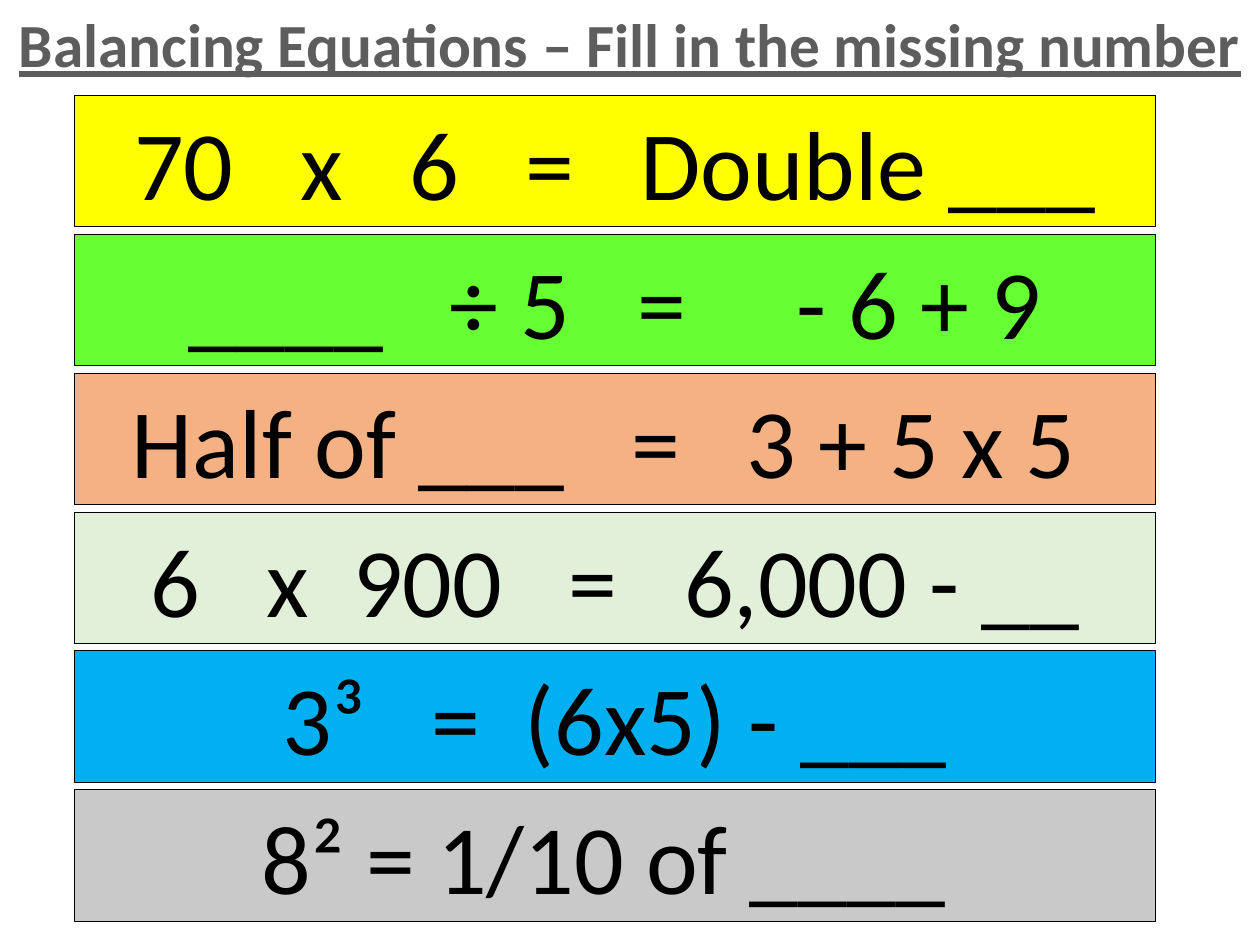
from pptx import Presentation
from pptx.dml.color import RGBColor as Rgb
from pptx.enum import shapes as sh, text as tx
from pptx.util import Inches, Pt


class Theme:
    font = "Calibri"
    ink = "000000"
    title = "5D5D5D"
    head = 35
    body = 56
    rule = 0.5
    space = 12.66


FRAME = {
    "word_wrap": True,
    "auto_size": tx.MSO_AUTO_SIZE.NONE,
    "vertical_anchor": tx.MSO_ANCHOR.MIDDLE,
}
HEAD = {"name": Theme.font, "size": Pt(Theme.head), "bold": True, "underline": True}
BODY = {"name": Theme.font, "size": Pt(Theme.body), "bold": False}

TITLE = "Balancing Equations – Fill in the missing number"
SUMS = [
    ("FFFF00", [("70", 3), ("x", 3), ("6", 3), ("=", 3), ("Double ___", 0)]),
    ("66FF33", [("____", 3), ("÷ 5", 3), ("=", 5), ("- 6 + 9", 0)]),
    ("F4B183", [("Half of ___", 3), ("=", 3), ("3 + 5 x 5", 1)]),
    ("E2F0D9", [("6", 3), ("x", 2), ("900", 3), ("=", 3), ("6,000 - __", 0)]),
    ("00B0F0", [("3³", 3), ("=", 2), ("(6x5) - ___", 0)]),
    ("C9C9C9", [("8² = 1/10 of ____", 1)]),
]


def apply(item, form):
    for key, val in form.items():
        setattr(item, key, val)


def add_run(para, words, form, color):
    run = para.add_run()
    run.text = words
    apply(run.font, form)
    run.font.color.rgb = Rgb.from_string(color)
    return run


def start(shape):
    apply(shape.text_frame, FRAME)
    para = shape.text_frame.paragraphs[0]
    para.alignment = tx.PP_ALIGN.CENTER
    return para


def add_title(slide, box):
    title = slide.shapes.title
    apply(title, dict(zip(("left", "top", "width", "height"), box)))
    add_run(start(title), TITLE, HEAD, Theme.title)


def add_sum(slide, box, color, terms):
    bar = slide.shapes.add_shape(sh.MSO_SHAPE.RECTANGLE, *box)
    bar.shadow.inherit = False
    bar.fill.solid()
    bar.fill.fore_color.rgb = Rgb.from_string(color)
    bar.line.color.rgb = Rgb.from_string(Theme.ink)
    bar.line.width = Pt(Theme.rule)
    para = start(bar)
    for term, gap in terms:
        add_run(para, term, BODY, Theme.ink)
        if gap:
            space = add_run(para, " ", BODY, Theme.ink)
            wide = round((gap - 1) * Theme.space * 100)
            space.font._element.set("spc", str(wide))


def add_sums(slide, box):
    left, top, width, height = box
    gap = Inches(0.06)
    tall = (height - gap * (len(SUMS) - 1)) // len(SUMS)
    for row, (color, terms) in enumerate(SUMS):
        spot = left, top + row * (tall + gap), width, tall
        add_sum(slide, spot, color, terms)


def main():
    deck = Presentation()
    deck.slide_width, deck.slide_height = Inches(10), Inches(7.5)
    slide = deck.slides.add_slide(deck.slide_layouts[5])
    add_title(slide, (0, 0, Inches(10), Inches(0.69)))
    add_sums(slide, (Inches(0.59), Inches(0.76), Inches(8.58), Inches(6.55)))
    deck.save("out.pptx")


if __name__ == "__main__":
    main()
